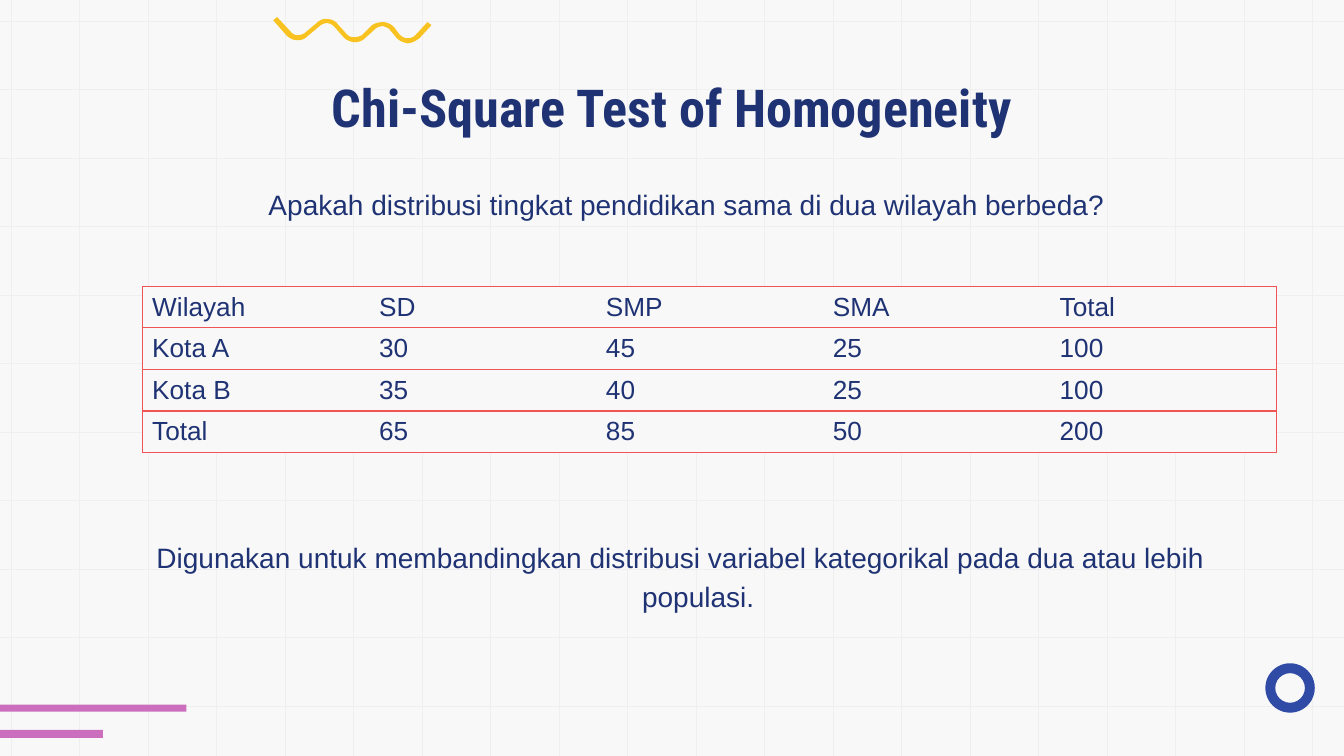
import pptx
import pptx.util
import pptx.dml.color
import pptx.enum.shapes
import pptx.enum.text
import pptx.oxml
import pptx.oxml.ns

Inches = pptx.util.Inches
Pt = pptx.util.Pt
NAVY, PAPER, GRID, RED = "1F3374", "F8F8F8", "EFEFEF", "F05555"
PINK, BLUE, YELLOW = "CB6EBE", "304BA6", "F8C220"


def color(hex_string):
    return pptx.dml.color.RGBColor.from_string(hex_string)


def paint(shape, hex_string):
    shape.shadow.inherit = False
    shape.fill.solid()
    shape.fill.fore_color.rgb = color(hex_string)
    shape.line.fill.background()


presentation = pptx.Presentation()
presentation.slide_width = Inches(13.33)
presentation.slide_height = Inches(7.5)
slide = presentation.slides.add_slide(presentation.slide_layouts[5])
slide.background.fill.solid()
slide.background.fill.fore_color.rgb = color(PAPER)
shapes = slide.shapes

grid_step = (13.02 - 0.11) / 19
grid_lines = [(13.33, 0.21 + i * grid_step, 0, 0.21 + i * grid_step) for i in range(11)]
grid_lines += [(0.11 + i * grid_step, -0.24, 0.11 + i * grid_step, 7.74) for i in range(20)]
for ends in grid_lines:
    connector = shapes.add_connector(
        pptx.enum.shapes.MSO_CONNECTOR.STRAIGHT, *[Inches(value) for value in ends])
    connector.line.color.rgb = color(GRID)
    connector.line.width = Pt(0.75)
    connector._element.spPr.append(pptx.oxml.parse_xml(
        f'<a:effectLst {pptx.oxml.ns.nsdecls("a")}/>'))

for top, width, height in [(6.99, 1.85, 0.07), (7.24, 1.02, 0.08)]:
    bar = shapes.add_shape(pptx.enum.shapes.MSO_SHAPE.RECTANGLE,
                           0, Inches(top), Inches(width), Inches(height))
    paint(bar, PINK)

ring = shapes.add_shape(pptx.enum.shapes.MSO_SHAPE.DONUT,
                        Inches(12.55), Inches(6.58), Inches(0.49), Inches(0.49))
ring.adjustments[0] = 0.2
paint(ring, BLUE)

wave_start = (2.75, 0.17)
wave_segments = [
    [(2.71, 0.2)], [(2.84, 0.35)],
    [(2.87, 0.38), (2.91, 0.4), (2.95, 0.4)], [(2.99, 0.4), (3.02, 0.39), (3.05, 0.36)],
    [(3.17, 0.26)],
    [(3.19, 0.24), (3.22, 0.23), (3.24, 0.23)], [(3.28, 0.23), (3.3, 0.25), (3.32, 0.27)],
    [(3.4, 0.36)],
    [(3.43, 0.4), (3.47, 0.41), (3.51, 0.42)], [(3.55, 0.42), (3.59, 0.41), (3.62, 0.38)],
    [(3.72, 0.29)],
    [(3.74, 0.27), (3.77, 0.26), (3.8, 0.26)], [(3.83, 0.27), (3.86, 0.28), (3.87, 0.3)],
    [(3.92, 0.36)],
    [(3.95, 0.4), (3.99, 0.42), (4.04, 0.43)], [(4.08, 0.43), (4.12, 0.41), (4.16, 0.38)],
    [(4.28, 0.25)], [(4.24, 0.22)], [(4.12, 0.35)],
    [(4.1, 0.37), (4.07, 0.38), (4.04, 0.38)], [(4.01, 0.38), (3.98, 0.36), (3.96, 0.34)],
    [(3.91, 0.27)],
    [(3.88, 0.24), (3.84, 0.22), (3.8, 0.22)], [(3.76, 0.22), (3.72, 0.23), (3.69, 0.25)],
    [(3.59, 0.35)],
    [(3.57, 0.36), (3.54, 0.37), (3.51, 0.37)], [(3.48, 0.37), (3.46, 0.36), (3.44, 0.34)],
    [(3.35, 0.24)],
    [(3.33, 0.21), (3.29, 0.19), (3.25, 0.19)], [(3.21, 0.18), (3.17, 0.2), (3.14, 0.23)],
    [(3.02, 0.33)],
    [(3, 0.34), (2.98, 0.35), (2.95, 0.35)], [(2.93, 0.35), (2.9, 0.34), (2.88, 0.31)],
]
wave_points = [wave_start]
for segment in wave_segments:
    if len(segment) == 1:
        wave_points += segment
        continue
    corners = [wave_points[-1], *segment]
    for step in range(1, 9):
        t = step / 8
        weights = ((1 - t) ** 3, 3 * t * (1 - t) ** 2, 3 * t ** 2 * (1 - t), t ** 3)
        wave_points.append(tuple(
            sum(weight * corner[axis] for weight, corner in zip(weights, corners))
            for axis in (0, 1)))
builder = shapes.build_freeform(Inches(wave_start[0]), Inches(wave_start[1]))
builder.add_line_segments([(Inches(x), Inches(y)) for x, y in wave_points[1:]], close=True)
paint(builder.convert_to_shape(), YELLOW)

title = shapes.title
shapes._spTree.append(title._element)
title.left, title.top = Inches(1.05), Inches(0.65)
title.width, title.height = Inches(11.23), Inches(0.84)
title.text_frame.text = "Chi-Square Test of Homogeneity"
title.text_frame.auto_size = pptx.enum.text.MSO_AUTO_SIZE.NONE
title.text_frame.vertical_anchor = pptx.enum.text.MSO_ANCHOR.TOP
title.text_frame.margin_top = title.text_frame.margin_bottom = Inches(0.1)
paragraph = title.text_frame.paragraphs[0]
paragraph.alignment = pptx.enum.text.PP_ALIGN.CENTER
paragraph.font.name = "Roboto Condensed"
paragraph.font.size = Pt(37.3)
paragraph.font.bold = True
paragraph.font.color.rgb = color(NAVY)

for left, top, text in [
    (1.05, 1.76, "Apakah distribusi tingkat pendidikan sama di dua wilayah berbeda?"),
    (0.99, 5.45, "Digunakan untuk membandingkan distribusi variabel kategorikal "
                 "pada dua atau lebih populasi."),
]:
    text_box = shapes.add_textbox(Inches(left), Inches(top), Inches(11.37), Inches(0.49))
    frame = text_box.text_frame
    frame.word_wrap = True
    frame.auto_size = pptx.enum.text.MSO_AUTO_SIZE.SHAPE_TO_FIT_TEXT
    frame.vertical_anchor = pptx.enum.text.MSO_ANCHOR.MIDDLE
    frame.text = text
    paragraph = frame.paragraphs[0]
    paragraph.alignment = pptx.enum.text.PP_ALIGN.CENTER
    paragraph.line_spacing = 1.15
    paragraph.font.name = "Arial"
    paragraph.font.size = Pt(20)
    paragraph.font.color.rgb = color(NAVY)
    properties = paragraph._p.get_or_add_pPr()
    properties.set("marL", str(Inches(0.5)))
    properties.set("indent", str(Inches(-0.35)))

education_rows = [
    ("Wilayah", "SD", "SMP", "SMA", "Total"),
    ("Kota A", "30", "45", "25", "100"),
    ("Kota B", "35", "40", "25", "100"),
    ("Total", "65", "85", "50", "200"),
]
table = shapes.add_table(4, 5, Inches(1.41), Inches(2.84),
                         Inches(11.25), Inches(1.64)).table
table.first_row = False
table.horz_banding = False
for row_index, row in enumerate(education_rows):
    for column_index, text in enumerate(row):
        cell = table.cell(row_index, column_index)
        cell.text = text
        cell.vertical_anchor = pptx.enum.text.MSO_ANCHOR.MIDDLE
        cell.fill.solid()
        cell.fill.fore_color.rgb = color(PAPER)
        font = cell.text_frame.paragraphs[0].font
        font.name = "Arial"
        font.size = Pt(18.7)
        font.color.rgb = color(NAVY)
        visible = {"L": column_index == 0, "R": column_index == 4, "T": True, "B": True}
        for position, (side, shown) in enumerate(visible.items()):
            fill = f'<a:solidFill><a:srgbClr val="{RED}"/></a:solidFill>' if shown else "<a:noFill/>"
            cell._tc.get_or_add_tcPr().insert(position, pptx.oxml.parse_xml(
                f'<a:ln{side} {pptx.oxml.ns.nsdecls("a")} w="{Pt(1)}">{fill}</a:ln{side}>'))

presentation.save("out.pptx")
